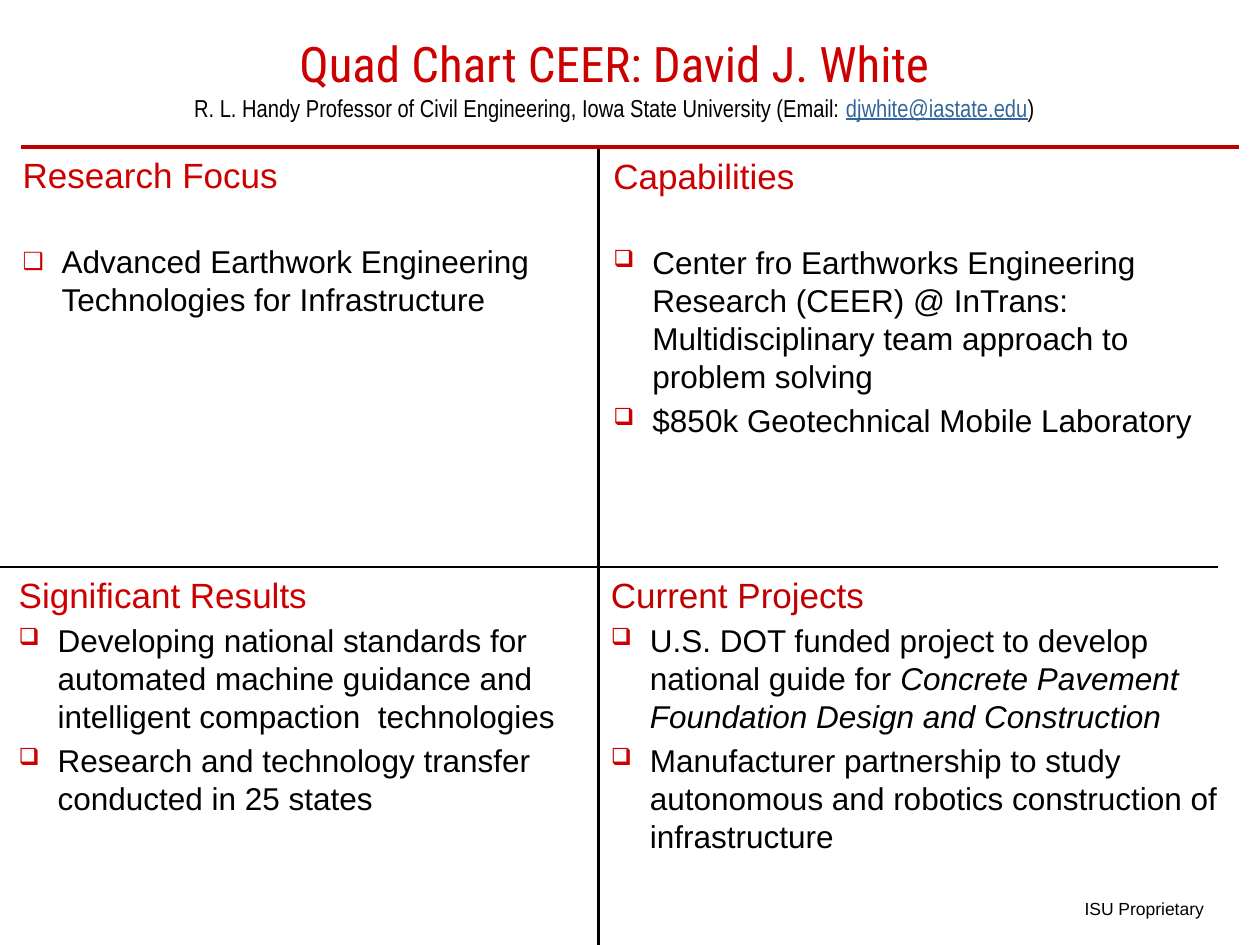
from lxml.etree import SubElement
from pptx import Presentation
from pptx.dml.color import RGBColor
from pptx.enum.shapes import MSO_CONNECTOR as Connector
from pptx.enum.text import MSO_ANCHOR as Anchor, MSO_AUTO_SIZE as AutoSize, PP_ALIGN as Align
from pptx.oxml.ns import qn
from pptx.util import Inches, Pt

RED, BLACK, BLUE, RULE_RED = "CC0000", "000000", "336699", "C00000"
MIDDLE_X, TOP_Y, MIDDLE_Y = 4.75, 1.17, 4.5
BULLET_GAP, HEADING_GAP = 3.6, 26.5


def color(value):
    """Turn a hex string into a colour."""
    return RGBColor.from_string(value)


def add_text(para, text, size=18, font="Arial", fill=BLACK, italic=False, underline=False):
    """Append one formatted run to a paragraph."""
    span = para.add_run()
    span.text = text
    span.font.size = Pt(size)
    span.font.name = font
    span.font.bold = False
    span.font.italic = italic
    span.font.underline = underline
    span.font.color.rgb = color(fill)


def add_bullet(para):
    """Give a paragraph a hanging red checkbox bullet."""
    properties = para._p.get_or_add_pPr()
    properties.set("marL", str(Inches(0.31)))
    properties.set("indent", str(-Inches(0.31)))
    bullet_color = SubElement(properties, qn("a:buClr"))
    SubElement(bullet_color, qn("a:srgbClr"), val=RED)
    SubElement(properties, qn("a:buSzPct"), val="75000")
    SubElement(properties, qn("a:buChar"), char="❑")


def place(shape, box):
    """Move a shape to a box given in inches."""
    shape.left, shape.top, shape.width, shape.height = map(Inches, box)


def add_rule(page, start, end, width=1.5, fill=BLACK):
    """Draw a straight rule between two points."""
    rule = page.shapes.add_connector(Connector.STRAIGHT, *map(Inches, start + end))
    rule.line.width = Pt(width)
    rule.line.color.rgb = color(fill)
    SubElement(rule._element.spPr, qn("a:effectLst"))


def fill_title(title, box):
    """Write the heading and the contact line in the title placeholder."""
    place(title, box)
    frame = title.text_frame
    frame.auto_size = AutoSize.NONE
    frame.vertical_anchor = Anchor.MIDDLE
    para = frame.paragraphs[0]
    para.alignment = Align.CENTER
    add_text(para, "Quad Chart CEER: David J. White", size=28, font="Roboto Condensed", fill=RED)
    para.add_line_break()
    contact = {"size": 14, "font": "Arial Narrow"}
    add_text(para, "R. L. Handy Professor of Civil Engineering, Iowa State University (Email: ", **contact)
    add_text(para, "djwhite@iastate.edu", fill=BLUE, underline=True, **contact)
    add_text(para, ")", **contact)


def fill_quadrant(shape, box, heading, bullets, gap=BULLET_GAP, fill=RED):
    """Write a heading and its bullets, each a list of (text, italic) parts."""
    place(shape, box)
    frame = shape.text_frame
    frame.word_wrap = True
    frame.auto_size = AutoSize.NONE
    frame.vertical_anchor = Anchor.TOP
    title_para = frame.paragraphs[0]
    title_para.alignment = Align.LEFT
    title_para.space_before = Pt(0)
    add_text(title_para, heading, size=20, fill=fill)
    for index, parts in enumerate(bullets):
        para = frame.add_paragraph()
        add_bullet(para)
        para.alignment = Align.LEFT
        para.space_before = Pt(BULLET_GAP if index else gap)
        for text, italic in parts:
            add_text(para, text, italic=italic)


def add_footer(page, box):
    """Add the small ownership note."""
    note = page.shapes.add_textbox(*map(Inches, box))
    add_text(note.text_frame.paragraphs[0], "ISU Proprietary", size=10)


def build_page(deck):
    """Build the quad chart slide."""
    page = deck.slides.add_slide(deck.slide_layouts[0])
    fill_title(page.shapes.title, (0.25, 0.08, 9.25, 1.08))
    fill_quadrant(
        page.placeholders[1], (0.08, TOP_Y, 4.58, 3.17), "Research Focus",
        [[("Advanced Earthwork Engineering Technologies for Infrastructure", False)]],
        gap=HEADING_GAP)
    add_rule(page, (MIDDLE_X, TOP_Y), (MIDDLE_X, 7.5))
    add_rule(page, (0.17, TOP_Y), (9.83, TOP_Y), width=2.25, fill=RULE_RED)
    for edge in (0, 9.67):
        add_rule(page, (edge, MIDDLE_Y), (MIDDLE_X, MIDDLE_Y))

    quadrants = [
        ((0.05, MIDDLE_Y, 4.83, 2.77), "Significant Results", [
            [("Developing national standards for automated machine guidance and "
              "intelligent compaction  technologies", False)],
            [("Research and technology transfer conducted in 25 states", False)],
        ], BULLET_GAP, RED),
        ((4.77, 1.18, 5.08, 3.16), "Capabilities", [
            [("Center fro Earthworks Engineering Research (CEER) @ InTrans: "
              "Multidisciplinary team approach to problem solving", False)],
            [("$850k Geotechnical Mobile Laboratory", False)],
        ], HEADING_GAP, RED),
        ((MIDDLE_X, MIDDLE_Y, 5.08, 3.16), "Current Projects", [
            [("U.S. DOT funded project to develop national guide for ", False),
             ("Concrete Pavement Foundation Design and Construction", True)],
            [("Manufacturer partnership to study autonomous and robotics "
              "construction of infrastructure", False)],
        ], BULLET_GAP, RULE_RED),
    ]
    for box, heading, bullets, gap, fill in quadrants:
        shape = page.shapes.add_textbox(*map(Inches, box))
        fill_quadrant(shape, box, heading, bullets, gap=gap, fill=fill)
    add_footer(page, (8.51, 7.08, 1.16, 0.27))


def main():
    """Create and save the deck."""
    deck = Presentation()
    deck.slide_width, deck.slide_height = Inches(10), Inches(7.5)
    build_page(deck)
    deck.save("out.pptx")


if __name__ == "__main__":
    main()
